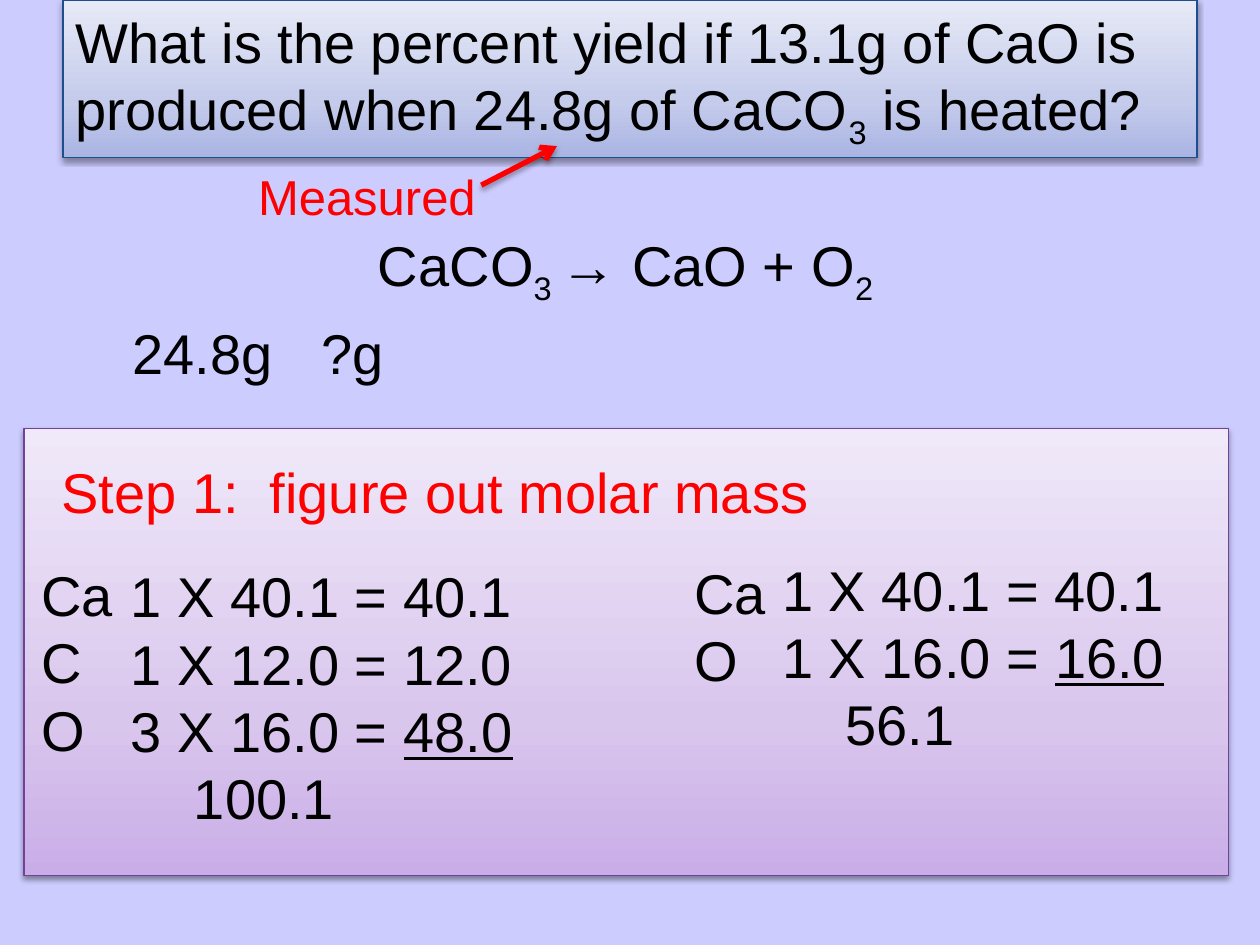
from lxml import etree
from pptx import Presentation
from pptx.dml.color import RGBColor
from pptx.enum.shapes import MSO_CONNECTOR, MSO_SHAPE
from pptx.enum.text import MSO_ANCHOR, MSO_AUTO_SIZE, PP_ALIGN
from pptx.oxml.ns import qn
from pptx.util import Inches, Pt

RECT, LINE = MSO_SHAPE.RECTANGLE, MSO_CONNECTOR.STRAIGHT
LEFT, MID = PP_ALIGN.LEFT, PP_ALIGN.CENTER
BASE, TOP, FIXED = MSO_ANCHOR.BOTTOM, MSO_ANCHOR.TOP, MSO_AUTO_SIZE.NONE

HUES = {"back": "CCCCFF", "ink": "000000", "red": "FF0000",
        "blue": "1F4E8F", "plum": "744198"}

# Content: each paragraph is a list of (text, style) runs
TITLE = [[("What is the percent yield if 13.1g of CaO is produced "
           "when 24.8g of CaCO", ""), ("3", "sub"), (" is heated?", "")]]
BODY = [[("CaCO", ""), ("3 ", "sub"), ("→ CaO + O", ""), ("2", "sub")],
        [("\t24.8g\t?g", "")]]
LEFT_SUM = [[("1 X 40.1 = 40.1", "")], [("1 X 12.0 = 12.0", "")],
            [("3 X 16.0 = ", ""), ("48.0", "line")], [("\t100.1", "")]]
RIGHT_SUM = [[("1 X 40.1 = 40.1", "")],
             [("1 X 16.0 = ", ""), ("16.0", "line")], [("\t56.1", "")]]

# Text boxes: place, paragraphs, format
BOXES = [
    ((1.95, 1.27, 2, 0.57), [[("Measured", "")]], {"size": 28, "hue": "red"}),
    ((0.23, 4.4, 0.78, 1.72), [[(s, "")] for s in ("Ca", "C", "O")],
     {"wrap": False}),
    ((0.94, 4.41, 4.95, 2.26), LEFT_SUM, {"tabs": [1.98]}),
    ((5.41, 4.38, 0.78, 1.18), [[(s, "")] for s in ("Ca", "O")],
     {"wrap": False}),
    ((6.11, 4.36, 3.89, 1.72), RIGHT_SUM, {"tabs": [2.22]}),
    ((0.39, 3.58, 6.18, 0.64), [[("Step 1:  figure out molar mass", "")]],
     {"hue": "red", "wrap": False}),
]

# Gradient stops run from the bottom edge to the top
TITLE_FADE = [(0, "A9B4E3"), (35, "C4CBEB"), (100, "E7EAF6")]
PANEL_FADE = [(0, "C9ADE7"), (35, "D9C6ED"), (100, "F0E9F9")]


def rgb(name):
    return RGBColor.from_string(HUES[name])


def add(node, tag, **vals):
    return etree.SubElement(node, qn(tag), {k: str(v) for k, v in vals.items()})


def place(shape, at):
    for name, val in zip(("left", "top", "width", "height"), at):
        setattr(shape, name, Inches(val))


def shade(shape, alpha, dist):
    props = shape._element.spPr
    effect = props.find(qn("a:effectLst"))
    if effect is None:
        effect = add(props, "a:effectLst")
    cast = add(effect, "a:outerShdw", blurRad=Pt(3.1), dist=Pt(dist),
               dir=5400000, rotWithShape=0)
    tint = add(cast, "a:srgbClr", val=HUES["ink"])
    add(tint, "a:alpha", val=alpha * 1000)


def fade(shape, stops, edge):
    shape.fill.gradient()
    shape.fill.gradient_angle = 90
    steps = shape._element.spPr.find(".//" + qn("a:gsLst"))
    for old in list(steps):
        steps.remove(old)
    for pos, hue in stops:
        add(add(steps, "a:gs", pos=pos * 1000), "a:srgbClr", val=hue)
    shape.line.color.rgb = rgb(edge)
    shape.line.width = Pt(0.75)
    shape.shadow.inherit = False
    shade(shape, 38, 1.6)


def write(frame, paras, size=32, hue="ink", wrap=True, tabs=()):
    frame.word_wrap = wrap
    frame.auto_size = FIXED
    for i, runs in enumerate(paras):
        para = frame.paragraphs[0] if i == 0 else frame.add_paragraph()
        para.alignment = LEFT
        props = para._p.get_or_add_pPr()
        props.set("marL", "0")
        props.set("indent", "0")
        add(props, "a:buNone")
        if runs[0][0].startswith("\t"):
            stops = add(props, "a:tabLst")
            for pos in tabs:
                add(stops, "a:tab", pos=Inches(pos), algn="l")
        para.space_before = Pt(0)
        for text, style in runs:
            run = para.add_run()
            run.text = text
            look = {"name": "Arial", "size": Pt(size)}
            if style == "line":
                look["underline"] = True
            for key, val in look.items():
                setattr(run.font, key, val)
            run.font.color.rgb = rgb(hue)
            if style == "sub":
                run.font._element.set("baseline", "-25000")


def main():
    deck = Presentation()
    deck.slide_width, deck.slide_height = Inches(10), Inches(7.5)
    slide = deck.slides.add_slide(deck.slide_layouts[1])
    slide.background.fill.solid()
    slide.background.fill.fore_color.rgb = rgb("back")
    shapes = slide.shapes

    # Panel behind the sums
    panel = shapes.add_shape(RECT, 0, 0, 0, 0)
    place(panel, (0.19, 3.4, 9.56, 3.55))
    fade(panel, PANEL_FADE, "plum")
    shapes._spTree.insert(2, panel._element)

    # Question
    title = shapes.title
    place(title, (0.5, 0, 9, 1.25))
    fade(title, TITLE_FADE, "blue")
    write(title.text_frame, TITLE)
    title.text_frame.vertical_anchor = BASE

    # Equation with the masses below it
    body = slide.placeholders[1]
    place(body, (0.45, 1.78, 9.03, 2.28))
    write(body.text_frame, BODY, tabs=[2.86, 5.08])
    body.text_frame.vertical_anchor = TOP
    first, second = body.text_frame.paragraphs
    first.alignment = MID
    second.space_before = Pt(6.4)

    # Labels and sums
    for at, paras, form in BOXES:
        box = shapes.add_textbox(*(Inches(v) for v in at))
        write(box.text_frame, paras, **form)

    # Arrow from the label to the measured mass
    ends = (Inches(v) for v in (3.82, 1.47, 4.42, 1.16))
    arrow = shapes.add_connector(LINE, *ends)
    arrow.line.color.rgb = rgb("red")
    arrow.line.width = Pt(3)
    add(arrow.line._get_or_add_ln(), "a:tailEnd", type="arrow")
    shade(arrow, 35, 1.8)

    deck.save("out.pptx")


if __name__ == "__main__":
    main()
